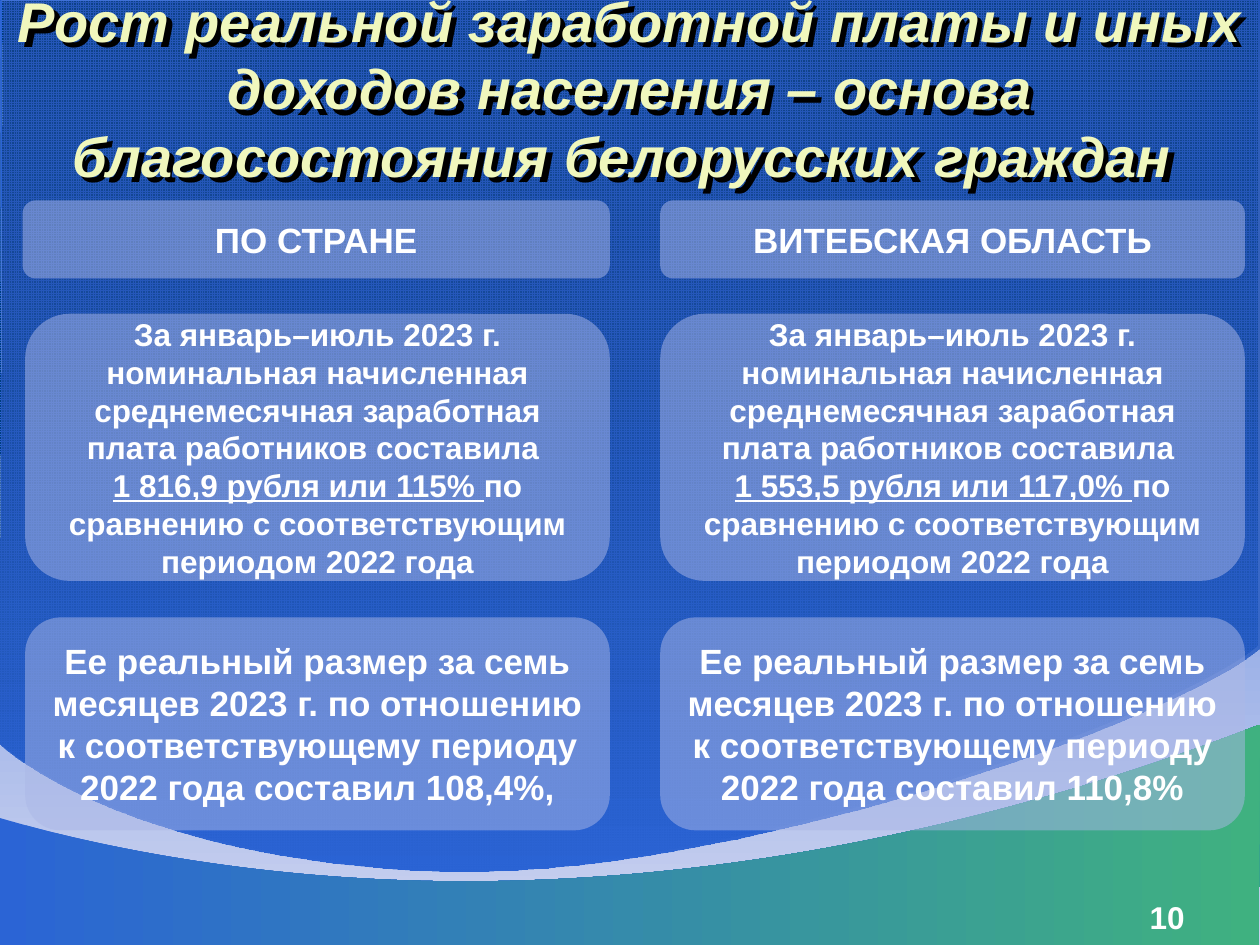
from lxml import etree
from pptx import Presentation
from pptx.dml.color import RGBColor
from pptx.enum.dml import MSO_PATTERN
from pptx.enum.shapes import MSO_SHAPE
from pptx.enum.text import MSO_ANCHOR, MSO_AUTO_SIZE, PP_ALIGN
from pptx.oxml.ns import qn
from pptx.util import Inches, Pt

ROUNDED = MSO_SHAPE.ROUNDED_RECTANGLE
SMALL_GRID = MSO_PATTERN.SMALL_GRID
MIDDLE, TOP = MSO_ANCHOR.MIDDLE, MSO_ANCHOR.TOP
CENTER, RIGHT = PP_ALIGN.CENTER, PP_ALIGN.RIGHT
NO_FIT = MSO_AUTO_SIZE.NONE

FONT = "Arial"
BLUE, NAVY, DEEP, PALE, GREEN = "2B64D5", "003D7B", "1F4898", "CED4F0", "3FB180"
CARD, WHITE, CREAM, BLACK = "ACB8E7", "FFFFFF", "F0F7BD", "000000"

# Card left, heading left, heading, wage, real growth
COLUMNS = [
    (0.2, 0.18, "ПО СТРАНЕ", "1 816,9 рубля или 115% ", "108,4%,"),
    (5.24, 5.24, "ВИТЕБСКАЯ ОБЛАСТЬ", "1 553,5 рубля или 117,0% ", "110,8%"),
]
CARD_W = 4.64

# Outlines: a two-number item is a corner, a six-number item a Bezier curve.
SKY_GRID = [(-0.01, 5.89), (0.11, 6.01, 1.1, 6.79, 3.42, 6.9),
            (5.73, 6.99, 9.34, 5.68, 9.99, 5.12), (9.99, -0.02), (0, -0.01),
            (0.01, 0.01)]
SKY_TINT = [(0, 5.9), (0.12, 6.02, 1.12, 6.81, 3.43, 6.91),
            (5.75, 7.01, 9.36, 5.7, 10, 5.14), (10, -0.01), (0.02, 0.01),
            (0.03, 0.02)]
HILL = [(-0.01, 6.49), (0.11, 6.52, 1.29, 6.9, 3.05, 6.98),
        (4.81, 7.06, 7.22, 6.83, 10, 5.75), (9.99, 7.5), (-0.03, 7.5)]


def rgb(color):
    return RGBColor.from_string(color)


def set_alpha(fill_element, percent):
    color = next(fill_element.iter(qn("a:srgbClr")))
    etree.SubElement(color, qn("a:alpha")).set("val", str(percent * 1000))


def set_gradient(fill, start, end, angle):
    """Two-colour gradient; the angle runs counter-clockwise."""
    fill.gradient()
    fill.gradient_angle = angle
    for stop, color, position in zip(fill.gradient_stops, (start, end), (0, 1)):
        stop.color.rgb = rgb(color)
        stop.position = position


def add_wave(s, outline):
    """Draw all points as lines, then merge each curve's three into a Bezier."""
    points = [(Inches(item[i]), Inches(item[i + 1]))
              for item in outline for i in range(0, len(item), 2)]
    builder = s.shapes.build_freeform(*points[0])
    builder.add_line_segments(points[1:], close=True)
    sp = builder.convert_to_shape()
    lines = iter(list(sp.element.iter(qn("a:lnTo"))))
    for item in outline[1:]:
        line = next(lines)
        if len(item) == 6:
            curve = etree.Element(qn("a:cubicBezTo"))
            line.addprevious(curve)
            for part in (line, next(lines), next(lines)):
                curve.append(part[0])
                part.getparent().remove(part)
    sp.shadow.inherit = False
    sp.line.fill.background()
    return sp


def add_background(s):
    set_gradient(s.background.fill, BLUE, PALE, 270)

    grid = add_wave(s, SKY_GRID).fill
    grid.patterned()
    grid.pattern = SMALL_GRID
    grid.fore_color.rgb = rgb(BLUE)
    grid.back_color.rgb = rgb(NAVY)

    tint = add_wave(s, SKY_TINT)
    set_gradient(tint.fill, DEEP, BLUE, 270)
    set_alpha(tint.element.spPr, 46)

    set_gradient(add_wave(s, HILL).fill, BLUE, GREEN, 0)


def set_up_frame(tf, anchor, align):
    tf.word_wrap = True
    tf.auto_size = NO_FIT
    tf.vertical_anchor = anchor
    tf.paragraphs[0].alignment = align


def format_run(r, size, color=WHITE):
    r.font.name = FONT
    r.font.size = Pt(size)
    r.font.bold = True
    r.font.color.rgb = rgb(color)


def add_run(p, text, size):
    r = p.add_run()
    r.text = text
    format_run(r, size)
    return r


def add_shadow(sp):
    """Cast a black shadow; on an unfilled shape the text casts it."""
    sp.fill.background()
    sp.shadow.inherit = False
    effects = sp.element.spPr.find(qn("a:effectLst"))
    shadow = etree.SubElement(effects, qn("a:outerShdw"), dist="53882",
                              dir="2700000", algn="ctr", rotWithShape="0")
    etree.SubElement(shadow, qn("a:srgbClr"), val=BLACK)


def add_title(s, text):
    title = s.shapes.title
    title.left, title.top = Inches(0), Inches(0.08)
    title.width, title.height = Inches(10), Inches(1.23)
    s.shapes.element.append(title.element)  # in front of the waves
    add_shadow(title)
    tf = title.text_frame
    tf.text = text
    set_up_frame(tf, MIDDLE, CENTER)
    r = tf.paragraphs[0].runs[0]
    format_run(r, 32, CREAM)
    r.font.italic = True


def add_card(s, left, top, width, height):
    """Add a translucent card and return its paragraph."""
    sp = s.shapes.add_shape(ROUNDED, Inches(left), Inches(top),
                            Inches(width), Inches(height))
    sp.shadow.inherit = False
    sp.line.fill.background()
    sp.fill.solid()
    sp.fill.fore_color.rgb = rgb(CARD)
    set_alpha(sp.element.spPr, 50)
    set_up_frame(sp.text_frame, MIDDLE, CENTER)
    return sp.text_frame.paragraphs[0]


def add_column(s, left, heading_left, heading, wage, real_growth):
    heading_w = left + CARD_W - heading_left
    add_run(add_card(s, heading_left, 1.59, heading_w, 0.62), heading, 20)

    p = add_card(s, left, 2.49, CARD_W, 2.12)
    add_run(p, "За январь–июль 2023 г. номинальная начисленная "
               "среднемесячная заработная плата работников составила ", 18)
    p.add_line_break()
    add_run(p, wage, 18).font.underline = True
    add_run(p, "по сравнению с соответствующим периодом 2022 года", 18)

    add_run(add_card(s, left, 4.9, CARD_W, 1.69),
            "Ее реальный размер за семь месяцев 2023 г. по отношению "
            f"к соответствующему периоду 2022 года составил {real_growth}", 20)


def add_slide_number(s, number):
    box = s.shapes.add_textbox(Inches(7.17), Inches(7.08), Inches(2.33), Inches(0.27))
    set_up_frame(box.text_frame, TOP, RIGHT)
    add_run(box.text_frame.paragraphs[0], number, 18)


def main():
    prs = Presentation()
    prs.slide_width, prs.slide_height = Inches(10), Inches(7.5)
    s = prs.slides.add_slide(prs.slide_layouts[5])
    add_background(s)
    add_slide_number(s, "10")
    add_title(s, "Рост реальной заработной платы и иных доходов населения – "
                 "основа благосостояния белорусских граждан ")
    for column in COLUMNS:
        add_column(s, *column)
    prs.save("out.pptx")


if __name__ == "__main__":
    main()
